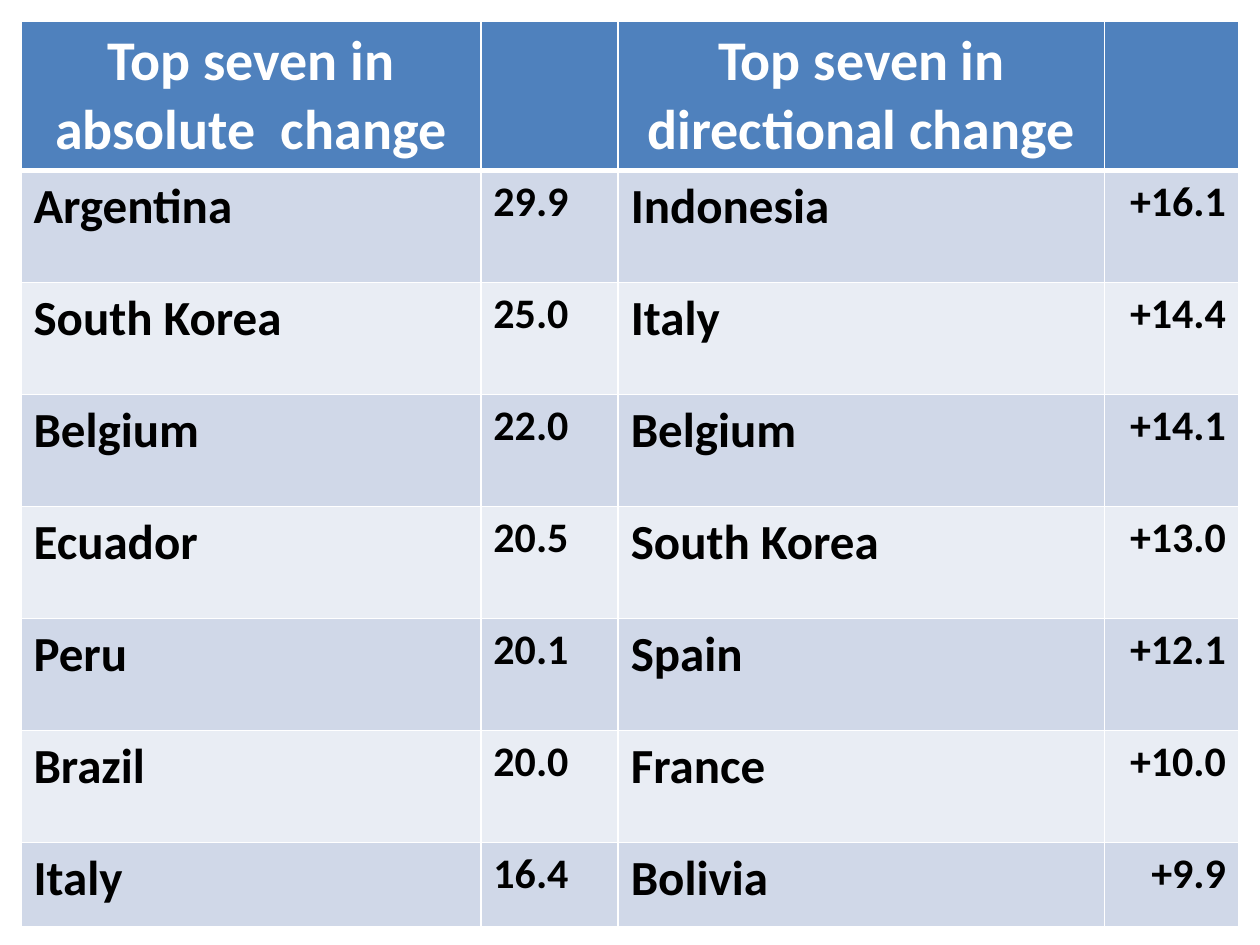
"""Build a slide with a table of the seven largest absolute and directional changes."""
from dataclasses import dataclass

from lxml import etree
from pptx import Presentation
from pptx.dml.color import RGBColor
from pptx.enum import text
from pptx.oxml import ns
from pptx.util import Pt


@dataclass(frozen=True)
class Theme:
    font: str = "Calibri"
    header_fill: str = "4F81BD"
    bands: tuple = ("D0D8E8", "E9EDF4")
    light: str = "FFFFFF"
    dark: str = "000000"
    header_size: int = 32
    country_size: int = 28
    value_size: int = 24


def add_border(cell, side, width):
    line = etree.SubElement(cell._tc.get_or_add_tcPr(), ns.qn(f"a:{side}"), w=str(Pt(width)))
    fill = etree.SubElement(line, ns.qn("a:solidFill"))
    etree.SubElement(fill, ns.qn("a:srgbClr"), val=theme.light)


theme = Theme()
align = text.PP_ALIGN
rows = [
    ("Top seven in absolute  change", "", "Top seven in directional change", ""),
    ("Argentina", "29.9", "Indonesia", "+16.1"),
    ("South Korea", "25.0", "Italy", "+14.4"),
    ("Belgium", "22.0", "Belgium", "+14.1"),
    ("Ecuador", "20.5", "South Korea", "+13.0"),
    ("Peru", "20.1", "Spain", "+12.1"),
    ("Brazil", "20.0", "France", "+10.0"),
    ("Italy", "16.4", "Bolivia", "+9.9"),
]
column_widths = [262.8, 78.5, 278, 76.5]
row_heights = [57.6] + [64] * 6 + [48]
column_sizes = [theme.country_size, theme.value_size] * 2
column_aligns = [align.LEFT] * 3 + [align.RIGHT]

deck = Presentation()
deck.slide_width, deck.slide_height = Pt(720), Pt(540)
page = deck.slides.add_slide(deck.slide_layouts[6])

frame = page.shapes.add_table(len(rows), len(column_widths), Pt(12), Pt(12), Pt(696), Pt(516))
table = frame.table
for column, width in zip(table.columns, column_widths):
    column.width = Pt(width)
for row, height in zip(table.rows, row_heights):
    row.height = Pt(height)
frame.height = Pt(516)

for row_index, values in enumerate(rows):
    is_header = row_index == 0
    fill = theme.header_fill if is_header else theme.bands[(row_index - 1) % 2]
    for column_index, value in enumerate(values):
        cell = table.cell(row_index, column_index)
        for side in ("lnL", "lnR", "lnT", "lnB"):
            thick = (row_index, side) in ((0, "lnB"), (1, "lnT"))
            add_border(cell, side, 3 if thick else 1)
        cell.fill.solid()
        cell.fill.fore_color.rgb = RGBColor.from_string(fill)
        para = cell.text_frame.paragraphs[0]
        para.text = value
        para.alignment = align.CENTER if is_header else column_aligns[column_index]
        for span in para.runs:
            span.font.name = theme.font
            span.font.bold = True
            span.font.size = Pt(theme.header_size if is_header else column_sizes[column_index])
            span.font.color.rgb = RGBColor.from_string(theme.light if is_header else theme.dark)

deck.save("out.pptx")
